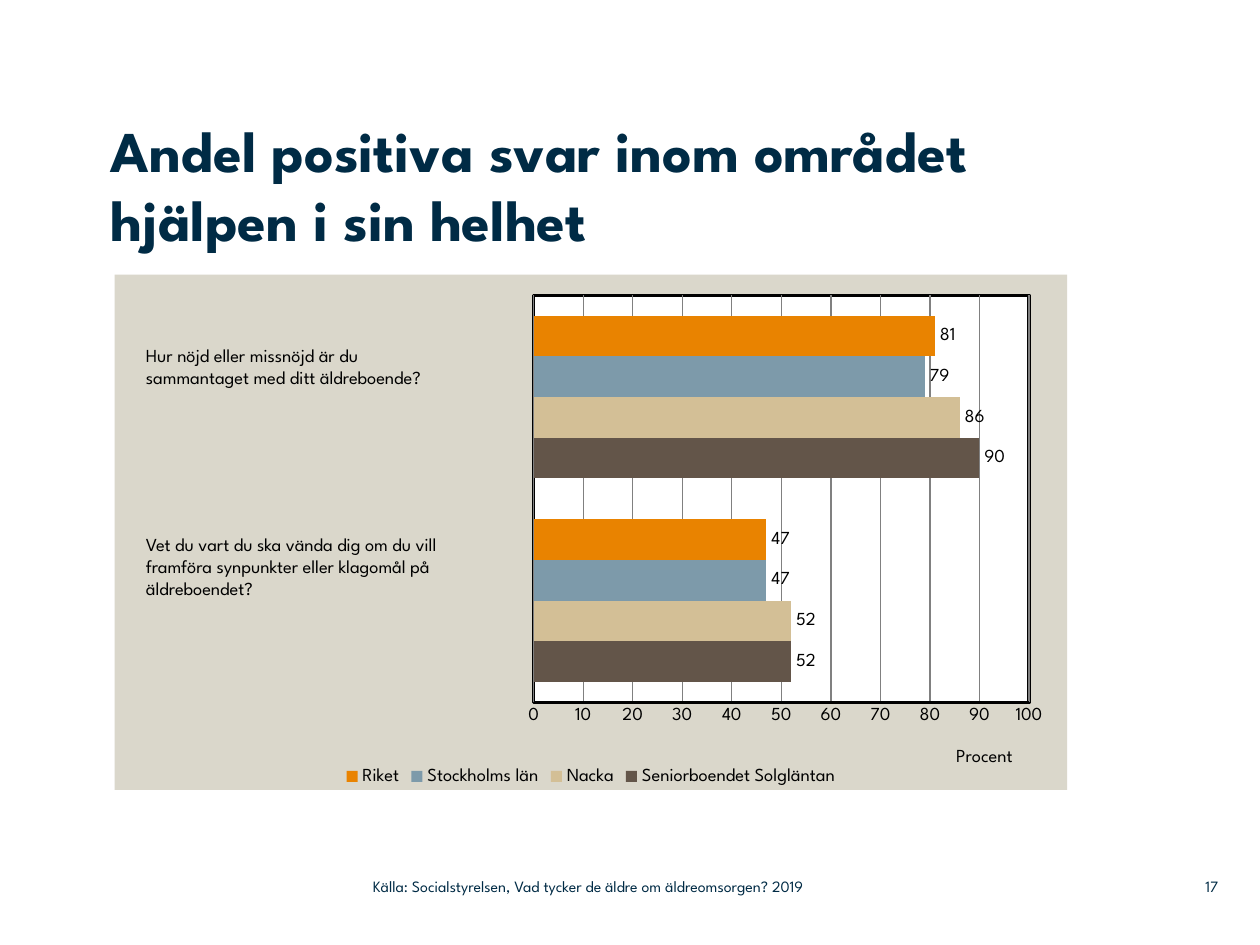
"""Build a slide with a bar chart of positive answers about elderly care."""
from lxml import etree
from pptx import Presentation
from pptx import util as u
from pptx.chart.data import CategoryChartData
from pptx.dml.color import RGBColor
from pptx.enum import chart as c
from pptx.enum import text as t
from pptx.oxml import parse_xml
from pptx.oxml.ns import nsdecls, qn

FONT = "League Spartan"
NAVY, BLACK, GREY = "002B45", "000000", "808080"
TITLE = "Andel positiva svar inom området hjälpen i sin helhet"
SERIES = [
    ("Seniorboendet Solgläntan", (52, 90), "635549"),
    ("Nacka", (52, 86), "D3BF96"),
    ("Stockholms län", (47, 79), "7D9AAA"),
    ("Riket", (47, 81), "E98300"),
]
QUESTIONS = [
    (["Hur nöjd eller missnöjd är du", "sammantaget med ditt äldreboende?"],
     (1.06, 2.68, 2.98, 0.45)),
    (["Vet du vart du ska vända dig om du vill framföra synpunkter "
      "eller klagomål på äldreboendet?"], (1.06, 4.18, 2.97, 0.63)),
]
FOOTERS = [
    ("17", (9.2, 6.89, 0.47, 0.29), t.PP_ALIGN.RIGHT),
    ("Källa: Socialstyrelsen, Vad tycker de äldre om äldreomsorgen? 2019",
     (2.96, 6.89, 4.43, 0.29), t.PP_ALIGN.LEFT),
]


def rgb(value):
    return RGBColor.from_string(value)


def style(font, size, color, bold=False):
    font.name, font.size, font.bold = FONT, u.Pt(size), bold
    font.color.rgb = rgb(color)


def place(shape, box):
    shape.left, shape.top, shape.width, shape.height = map(u.Inches, box)


def write(shape, lines, size, color, bold=False, align=t.PP_ALIGN.LEFT,
          anchor=t.MSO_ANCHOR.TOP, inset=None):
    frame = shape.text_frame
    frame.word_wrap = True
    frame.auto_size = t.MSO_AUTO_SIZE.NONE
    frame.vertical_anchor = anchor
    if inset is not None:
        frame.margin_left = frame.margin_right = u.Inches(inset)
        frame.margin_top = frame.margin_bottom = u.Inches(inset)
    frame.text = "\n".join(lines)
    for paragraph in frame.paragraphs:
        paragraph.alignment = align
        for run in paragraph.runs:
            style(run.font, size, color, bold)


def add_text(slide, box, lines, size, color, **options):
    shape = slide.shapes.add_textbox(*map(u.Inches, box))
    write(shape, lines, size, color, **options)


def shape_properties(fill, line=None, width=0):
    outline = "<a:ln><a:noFill/></a:ln>"
    if line:
        outline = (f'<a:ln w="{u.Pt(width)}"><a:solidFill><a:srgbClr val="{line}"/>'
                   "</a:solidFill></a:ln>")
    return parse_xml(f'<c:spPr {nsdecls("c", "a")}><a:solidFill><a:srgbClr val="{fill}"/>'
                     f"</a:solidFill>{outline}</c:spPr>")


def set_layout(parent, index, **values):
    for old in parent.findall(qn("c:layout")):
        parent.remove(old)
    layout = etree.Element(qn("c:layout"))
    manual = etree.SubElement(layout, qn("c:manualLayout"))
    for name, value in values.items():
        etree.SubElement(manual, qn(f"c:{name}")).set("val", str(value))
    parent.insert(index, layout)


def add_bar_chart(slide):
    data = CategoryChartData()
    data.categories = ["1", "2"]
    for name, values, _ in SERIES:
        data.add_series(name, values)
    chart = slide.shapes.add_chart(
        c.XL_CHART_TYPE.BAR_CLUSTERED,
        *map(u.Inches, (0.91, 2.18, 7.56, 4.09)), data).chart
    style(chart.font, 10.5, BLACK)
    chart.has_title = False
    chart.has_legend = True
    chart.legend.position = c.XL_LEGEND_POSITION.BOTTOM
    chart.legend.include_in_layout = False
    style(chart.legend.font, 10.5, BLACK)

    plot = chart.plots[0]
    plot.gap_width, plot.overlap, plot.vary_by_categories = 100, 0, False
    for series, (_, _, color) in zip(plot.series, SERIES):
        series.format.fill.solid()
        series.format.fill.fore_color.rgb = rgb(color)
        labels = series.data_labels
        labels.show_value = True
        labels.position = c.XL_LABEL_POSITION.OUTSIDE_END
        style(labels.font, 10.5, BLACK)

    chart.category_axis.visible = False
    axis = chart.value_axis
    axis.minimum_scale, axis.maximum_scale, axis.major_unit = 0, 100, 10
    axis.major_tick_mark = axis.minor_tick_mark = c.XL_TICK_MARK.NONE
    axis.format.line.color.rgb = rgb(BLACK)
    axis.format.line.width = u.Pt(2)
    axis.major_gridlines.format.line.color.rgb = rgb(GREY)
    axis.major_gridlines.format.line.width = u.Pt(0.75)
    style(axis.tick_labels.font, 10.5, BLACK)
    title = axis.axis_title
    title.text_frame.text = "Procent"
    style(title.text_frame.paragraphs[0].runs[0].font, 10.5, BLACK)
    set_layout(title._element, 1, xMode="edge", yMode="edge", x=0.88, y=0.91)

    space = chart._chartSpace
    area = space.chart.plotArea
    set_layout(area, 0, layoutTarget="inner", xMode="edge", yMode="edge",
               x=0.44, y=0.04, w=0.52, h=0.79)
    area.append(shape_properties("FFFFFF", BLACK, 2))
    space.chart.addnext(shape_properties("DAD7CB"))


def main():
    presentation = Presentation()
    presentation.slide_width, presentation.slide_height = u.Inches(10), u.Inches(7.5)
    slide = presentation.slides.add_slide(presentation.slide_layouts[5])
    add_bar_chart(slide)
    title = slide.shapes.title
    place(title, (0.88, 0.75, 7.6, 1.42))
    write(title, [TITLE], 33, NAVY, bold=True, anchor=t.MSO_ANCHOR.MIDDLE, inset=0)
    for lines, box in QUESTIONS:
        add_text(slide, box, lines, 10.5, BLACK)
    for line, box, align in FOOTERS:
        add_text(slide, box, [line], 9, NAVY, align=align,
                 anchor=t.MSO_ANCHOR.MIDDLE, inset=0)
    presentation.save("out.pptx")


if __name__ == "__main__":
    main()
